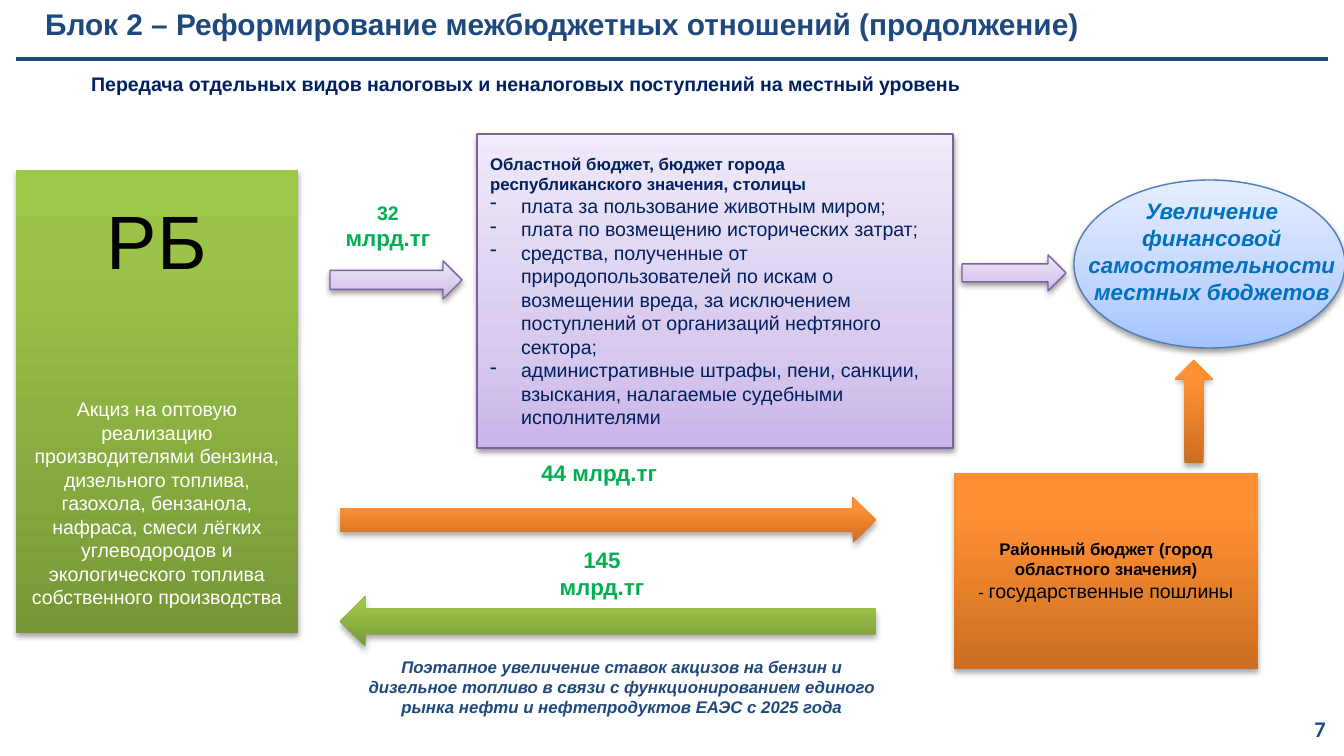
import pptx
import pptx.util
import pptx.dml.color
import pptx.enum.shapes
import pptx.enum.text
import pptx.oxml.ns
from lxml import etree

PX = 914400 / 134.4
SHAPE = pptx.enum.shapes.MSO_SHAPE
ANCHOR = pptx.enum.text.MSO_ANCHOR
ALIGN = {"l": pptx.enum.text.PP_ALIGN.LEFT, "c": pptx.enum.text.PP_ALIGN.CENTER,
         "r": pptx.enum.text.PP_ALIGN.RIGHT, "j": pptx.enum.text.PP_ALIGN.JUSTIFY}
COLORS = {"navy": "002060", "blue": "1F497D", "sky": "0070C0", "green": "00B050",
          "black": "000000", "white": "FFFFFF", "violet_edge": "7D60A0", "blue_edge": "4B7EBC"}
GRADIENTS = {
    "violet": [(0, "C9B5E8"), (35, "D8CBEE"), (100, "F0EAF9")],
    "orange": [(0, "CC6E20"), (80, "FF9034"), (100, "FF9136")],
    "lime": [(0, "779737"), (80, "9BC348"), (100, "9DC746")],
    "ice": [(0, "A4C4FF"), (35, "BFD4FF"), (100, "E6EEFF")],
}
EDGES = {"violet": "violet_edge", "ice": "blue_edge"}

REGION_TITLE = "Областной бюджет, бюджет города республиканского значения, столицы"
REGION_REVENUES = [
    "плата за пользование животным миром;",
    "плата по возмещению исторических затрат;",
    "средства, полученные от природопользователей по искам о возмещении вреда, "
    "за исключением поступлений от организаций нефтяного сектора;",
    "административные штрафы, пени, санкции, взыскания, налагаемые судебными исполнителями",
]
DISTRICT_TITLE = "Районный бюджет (город областного значения)"
EXCISE = ("Акциз на оптовую реализацию производителями бензина, дизельного топлива, газохола, "
          "бензанола, нафраса, смеси лёгких углеводородов и экологического топлива "
          "собственного производства")

BUDGETS = {
    "region": (SHAPE.RECTANGLE, (477, 134, 476, 314), "violet"),
    "district": (SHAPE.RECTANGLE, (954, 473, 304, 196), "orange"),
    "republic": (SHAPE.RECTANGLE, (16, 170, 282, 463), "lime"),
}
FLOWS = [
    (SHAPE.RIGHT_ARROW, (330, 261, 132, 38), "violet"),
    (SHAPE.RIGHT_ARROW, (340, 497, 536, 46), "orange"),
    (SHAPE.LEFT_ARROW, (340, 596, 536, 51), "lime"),
    (SHAPE.RIGHT_ARROW, (962, 255, 104, 36), "violet"),
    (SHAPE.UP_ARROW, (1175, 360, 38, 103), "orange"),
]
OUTCOME = (SHAPE.OVAL, (1074, 180, 271, 168), "ice")

AMOUNT = dict(size=12, color="green", bold=True, align="c")
LABELS = [
    ((324, 194, 128, 65), [("32 ", 10.5), ("млрд.тг", 12)], AMOUNT),
    ((528, 453, 144, 40), "44 млрд.тг", dict(AMOUNT, align="l", wrap=False)),
    ((532, 540, 140, 67), "145 млрд.тг", AMOUNT),
    ((348, 650, 547, 75),
     "Поэтапное увеличение ставок акцизов на бензин и дизельное топливо в связи с "
     "функционированием единого рынка нефти и нефтепродуктов ЕАЭС с 2025 года",
     dict(size=9, color="blue", bold=True, italic=True, align="c")),
    ((78, 65, 1189, 38),
     "Передача отдельных видов налоговых и неналоговых поступлений на местный уровень",
     dict(size=10.5, color="navy", bold=True)),
    ((32, -13, 1210, 73), "Блок 2 – Реформирование межбюджетных отношений (продолжение)",
     dict(size=16, color="blue", bold=True, align="j", after=18, middle=True)),
    ((1073, 191, 278, 122), "Увеличение финансовой самостоятельности местных бюджетов",
     dict(size=12, color="sky", bold=True, italic=True, align="c")),
    ((1301, 708, 38, 41), "7",
     dict(size=12, color="blue", bold=True, font="Calibri", align="r", middle=True)),
]


def px(*lengths):
    return [round(length * PX) for length in lengths]


def rgb(name):
    return pptx.dml.color.RGBColor.from_string(COLORS[name])


def child(parent, tag, **attributes):
    return etree.SubElement(parent, pptx.oxml.ns.qn(tag),
                            {key: str(value) for key, value in attributes.items()})


def write(frame, text, size, color, bold=False, italic=False, font="Arial", align="l",
          before=0, after=0, bullet=None, wrap=True, middle=False):
    frame.word_wrap = wrap
    frame.vertical_anchor = ANCHOR.MIDDLE if middle else ANCHOR.TOP
    paragraph = frame.paragraphs[0]
    if paragraph.runs:
        paragraph = frame.add_paragraph()
    paragraph.alignment = ALIGN[align]
    paragraph.space_before = pptx.util.Pt(before)
    paragraph.space_after = pptx.util.Pt(after)
    if bullet:
        properties = paragraph._p.get_or_add_pPr()
        indent = px(31)[0]
        properties.set("marL", str(indent))
        properties.set("indent", str(-indent))
        child(properties, "a:buChar", char=bullet)
    for words, points in [(text, size)] if isinstance(text, str) else text:
        run = paragraph.add_run()
        run.text = words
        run.font.size = pptx.util.Pt(points)
        run.font.name = font
        run.font.bold = bold
        run.font.italic = italic
        run.font.color.rgb = rgb(color)


def add_block(slide, kind, box, tone):
    block = slide.shapes.add_shape(kind, *px(*box))
    block.fill.background()
    gradient = etree.Element(pptx.oxml.ns.qn("a:gradFill"), rotWithShape="1")
    stops = child(gradient, "a:gsLst")
    for position, shade in GRADIENTS[tone]:
        child(child(stops, "a:gs", pos=position * 1000), "a:srgbClr", val=shade)
    child(gradient, "a:lin", ang=270 * 60000, scaled=0)
    properties = block._element.spPr
    properties.replace(properties.find(pptx.oxml.ns.qn("a:noFill")), gradient)
    edged = tone in EDGES
    if edged:
        block.line.color.rgb = rgb(EDGES[tone])
        block.line.width = pptx.util.Pt(0.75)
    else:
        block.line.fill.background()
    block.shadow.inherit = False
    shadow = child(properties.find(pptx.oxml.ns.qn("a:effectLst")), "a:outerShdw",
                   blurRad=40000, dist=20000 if edged else 23000, dir=90 * 60000, rotWithShape=0)
    child(child(shadow, "a:srgbClr", val=COLORS["black"]), "a:alpha",
          val=38000 if edged else 35000)
    return block


def main():
    deck = pptx.Presentation()
    deck.slide_width, deck.slide_height = px(1344, 756)
    slide = deck.slides.add_slide(deck.slide_layouts[6])

    budgets = {name: add_block(slide, *block).text_frame for name, block in BUDGETS.items()}
    write(budgets["region"], REGION_TITLE, 9, "navy", bold=True, middle=True)
    for revenue in REGION_REVENUES:
        write(budgets["region"], revenue, 10.5, "navy", bullet="-", middle=True)
    centred = dict(align="c", middle=True)
    write(budgets["district"], DISTRICT_TITLE, 9, "black", bold=True, **centred)
    write(budgets["district"], [("- ", 9), ("государственные пошлины", 10.5)], 9, "black", **centred)
    write(budgets["republic"], "РБ", 40.5, "black", **centred)
    write(budgets["republic"], EXCISE, 10.5, "white", before=60, **centred)

    for block in FLOWS + [OUTCOME]:
        add_block(slide, *block)

    rule = slide.shapes.add_connector(pptx.enum.shapes.MSO_CONNECTOR.STRAIGHT,
                                      *px(16, 59, 1328, 59))
    rule.line.color.rgb = rgb("blue")
    rule.line.width = pptx.util.Pt(2.25)
    child(rule._element.spPr, "a:effectLst")

    for box, text, style in LABELS:
        write(slide.shapes.add_textbox(*px(*box)).text_frame, text, **style)

    deck.save("out.pptx")


if __name__ == "__main__":
    main()
